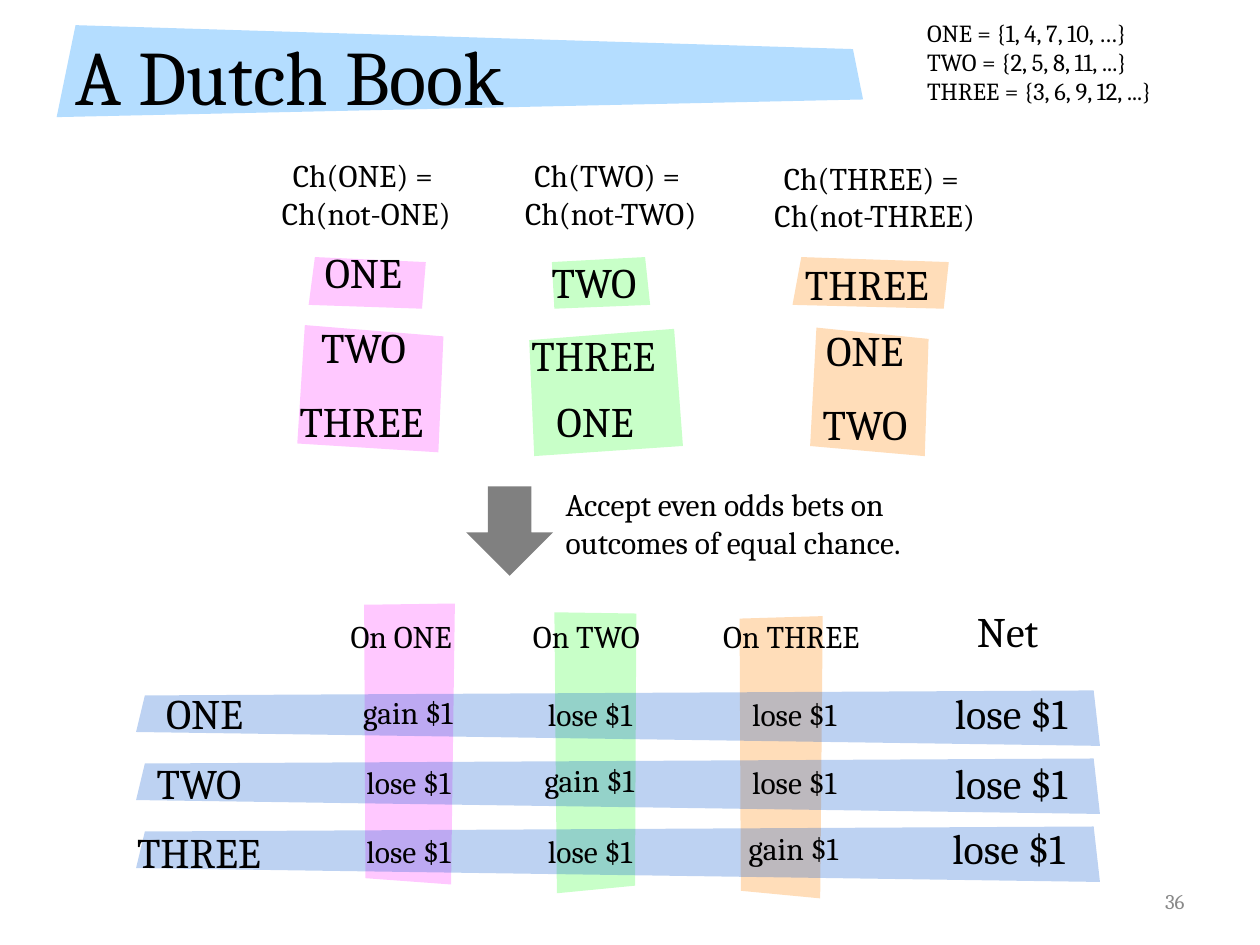
from dataclasses import dataclass
from typing import NamedTuple

from lxml.etree import SubElement
from pptx import Presentation
from pptx.dml.color import RGBColor
from pptx.enum.shapes import MSO_SHAPE
from pptx.enum.text import MSO_ANCHOR as Anchor, MSO_AUTO_SIZE as AutoSize, PP_ALIGN as Align
from pptx.oxml.ns import qn
from pptx.util import Inches, Pt


@dataclass(frozen=True)
class Theme:
    """Font, colours and type sizes of the slide."""
    font: str = "Cambria"
    ink: str = "000000"
    muted: str = "898989"
    title_band: str = "B4DDFF"
    one: str = "FFC8FF"
    two: str = "C8FFC8"
    three: str = "FFDDB9"
    outcome: str = "0054CF"
    outcome_alpha: int = 26
    arrow: str = "808080"
    title_size: int = 44
    large: int = 24
    body: int = 18
    small: int = 14
    footer: int = 12


class Box(NamedTuple):
    """A rectangle in inches."""
    left: float
    top: float
    width: float
    height: float

    def inner(self, left, top, width, height):
        """Return a rectangle placed relative to this one."""
        return Box(self.left + left, self.top + top, width, height)


THEME = Theme()
WORD_WIDTHS = {
    "ONE": 0.7, "TWO": 0.77, "THREE": 1.1, "Net": 0.49, "lose $1": 0.96,
    "gain $1": 1.03, "On ONE": 1.19, "On TWO": 1.25, "On THREE": 1.57,
}
CHANCES = [
    (Box(1.94, 1.19, 1.88, 2.4), 0, THEME.one,
     [("ONE", 0.54, 0.72), ("TWO", 0.51, 1.31), ("THREE", 0.34, 1.9)],
     [[(0.56, 0.85), (1.44, 0.89), (1.41, 1.26), (0.51, 1.23)],
      [(0.48, 1.39), (1.58, 1.48), (1.54, 2.4), (0.42, 2.33)]]),
    (Box(3.88, 1.19, 1.88, 2.43), 0, THEME.two,
     [("TWO", 0.4, 0.8), ("THREE", 0.24, 1.38), ("ONE", 0.44, 1.9)],
     [[(1.24, 0.85), (0.5, 0.89), (0.52, 1.26), (1.28, 1.23)],
      [(1.47, 1.42), (0.32, 1.51), (0.36, 2.43), (1.54, 2.35)]]),
    (Box(5.82, 1.19, 2.19, 2.43), 0.02, THEME.three,
     [("THREE", 0.47, 0.81), ("ONE", 0.64, 1.34), ("TWO", 0.61, 1.92)],
     [[(0.54, 0.85), (1.71, 0.89), (1.67, 1.26), (0.47, 1.23)],
      [(0.66, 1.41), (1.55, 1.5), (1.52, 2.43), (0.61, 2.35)]]),
]
OUTCOMES = [("ONE", 0.68), ("TWO", 0.64), ("THREE", 0.65)]
BETS = [("On ONE", 2.24, 2.28), ("On TWO", 3.71, 3.72), ("On THREE", 5.34, 5.34)]
NETS = [(7.07, 0.65), (7.07, 1.2), (7.05, 1.72)]
BET_BANDS = [
    (THEME.three, [(4.88, 0.15), (5.54, 0.13), (5.52, 2.37), (4.89, 2.31)]),
    (THEME.two, [(4.06, 0.11), (3.41, 0.1), (3.43, 2.33), (4.05, 2.27)]),
    (THEME.one, [(1.9, 0.04), (2.62, 0.03), (2.59, 2.26), (1.91, 2.21)]),
]


def style_text(frame, size, color=THEME.ink, align=Align.LEFT):
    """Format every paragraph of a text frame."""
    for paragraph in frame.paragraphs:
        paragraph.alignment = align
        for run in paragraph.runs:
            run.font.name = THEME.font
            run.font.size = Pt(size)
            run.font.color.rgb = RGBColor.from_string(color)


def add_text(shapes, box, text, size, color=THEME.ink, align=Align.LEFT, wrap=True):
    """Add a text box that grows with its text."""
    frame = shapes.add_textbox(*map(Inches, box)).text_frame
    frame.text = text
    frame.word_wrap = wrap
    frame.auto_size = AutoSize.SHAPE_TO_FIT_TEXT
    style_text(frame, size, color, align)
    return frame


def add_word(shapes, box, text, left, top, size):
    """Add a one-line label sized by its wording."""
    place = box.inner(left, top, word_width(text, size), 0.1 + 0.017 * size)
    add_text(shapes, place, text, size, wrap=False)


def word_width(text, size):
    """Return the width of a label with its side margins."""
    return 0.2 + WORD_WIDTHS[text] * size / THEME.large


def add_centered_word(shapes, box, text, center, top, size):
    """Add a one-line label around a centre line."""
    add_word(shapes, box, text, center - word_width(text, size) / 2, top, size)


def paint(shape, color):
    """Give a shape a flat fill without line or shadow."""
    shape.fill.solid()
    shape.fill.fore_color.rgb = RGBColor.from_string(color)
    shape.line.fill.background()
    shape.shadow.inherit = False


def add_patch(shapes, box, corners, color, alpha=None):
    """Add a slanted patch with corners relative to the box."""
    points = [(Inches(box.left + x), Inches(box.top + y)) for x, y in corners]
    builder = shapes.build_freeform(*points[0])
    builder.add_line_segments(points[1:], close=True)
    patch = builder.convert_to_shape()
    paint(patch, color)
    if alpha:
        tint = patch.element.spPr.find(f"{qn('a:solidFill')}/{qn('a:srgbClr')}")
        SubElement(tint, qn("a:alpha")).set("val", str(alpha * 1000))
    return patch


def add_heading(slide, box):
    """Place the title over its slanted band."""
    title = slide.shapes.title
    title.left, title.top, title.width, title.height = map(Inches, box.inner(0, 0, 8.37, 0.94))
    title.text_frame.text = "A Dutch Book"
    title.text_frame.vertical_anchor = Anchor.MIDDLE
    style_text(title.text_frame, THEME.title_size)
    corners = [(0.1, 0.08), (6.27, 0.27), (6.35, 0.67), (-0.05, 0.81)]
    band = add_patch(slide.shapes, box, corners, THEME.title_band)
    title.element.addprevious(band.element)


def add_definitions(slide, box):
    """List the members of the three sets."""
    sets = ["ONE = {1, 4, 7, 10, …}", "TWO = {2, 5, 8, 11, ...}", "THREE = {3, 6, 9, 12, ...}"]
    add_text(slide.shapes, box, "\n".join(sets), THEME.small, wrap=False)


def add_chance(slide, box, drop, color, words, patches):
    """Show one outcome above the two that make up its negation."""
    shapes = slide.shapes.add_group_shape().shapes
    for corners in patches:
        add_patch(shapes, box, corners, color)
    name = words[0][0]
    add_text(shapes, box.inner(0, drop, box.width, 0.71),
             f"Ch({name}) =\n Ch(not-{name})", THEME.body, align=Align.CENTER)
    for word, left, top in words:
        add_word(shapes, box, word, left, top, THEME.large)


def add_step(slide, box):
    """Place the arrow and the rule that leads to the bets."""
    shapes = slide.shapes.add_group_shape().shapes
    add_text(shapes, box.inner(0.69, 0, 2.94, 0.71),
             "Accept even odds bets on outcomes of equal chance.", THEME.body)
    arrow = shapes.add_shape(MSO_SHAPE.DOWN_ARROW, *map(Inches, box.inner(0, 0.06, 0.69, 0.71)))
    paint(arrow, THEME.arrow)


def add_bets(slide, box):
    """Cross the three bets with the three outcomes and their net result."""
    shapes = slide.shapes.add_group_shape().shapes
    for color, corners in BET_BANDS:
        add_patch(shapes, box, corners, color)
    for row in range(len(OUTCOMES)):
        top = 0.72 + 0.54 * row
        corners = [(0.09, top + 0.33), (7.74, top + 0.44), (7.69, top), (0.16, top + 0.04)]
        add_patch(shapes, box, corners, THEME.outcome, THEME.outcome_alpha)
    for bet, center, _ in BETS:
        add_centered_word(shapes, box, bet, center, 0.09, THEME.body)
    add_centered_word(shapes, box, "Net", 7.01, 0, THEME.large)
    for row, (outcome, center) in enumerate(OUTCOMES):
        add_centered_word(shapes, box, outcome, center, 0.65 + 0.55 * row, THEME.large)
        for column, (_, _, bet_center) in enumerate(BETS):
            result, lift = ("gain $1", 0.02) if row == column else ("lose $1", 0)
            add_centered_word(shapes, box, result, bet_center,
                              0.71 + 0.54 * row - lift, THEME.body)
        net_center, net_top = NETS[row]
        add_centered_word(shapes, box, "lose $1", net_center, net_top, THEME.large)


def add_page_number(slide, box):
    """Place the page number at the lower right."""
    frame = add_text(slide.shapes, box, "36", THEME.footer, THEME.muted, Align.RIGHT)
    frame.auto_size = AutoSize.NONE
    frame.vertical_anchor = Anchor.MIDDLE


def main():
    """Build and save the slide."""
    deck = Presentation()
    deck.slide_width, deck.slide_height = Inches(10), Inches(7.5)
    slide = deck.slides.add_slide(deck.slide_layouts[5])
    add_heading(slide, Box(0.5, 0.12, 8.37, 0.94))
    add_page_number(slide, Box(7.17, 6.95, 2.33, 0.4))
    add_definitions(slide, Box(7.26, 0.09, 2.26, 0.81))
    for chance in CHANCES:
        add_chance(slide, *chance)
    add_bets(slide, Box(0.99, 4.76, 7.75, 2.37))
    add_step(slide, Box(3.7, 3.8, 3.63, 0.77))
    deck.save("out.pptx")


if __name__ == "__main__":
    main()
